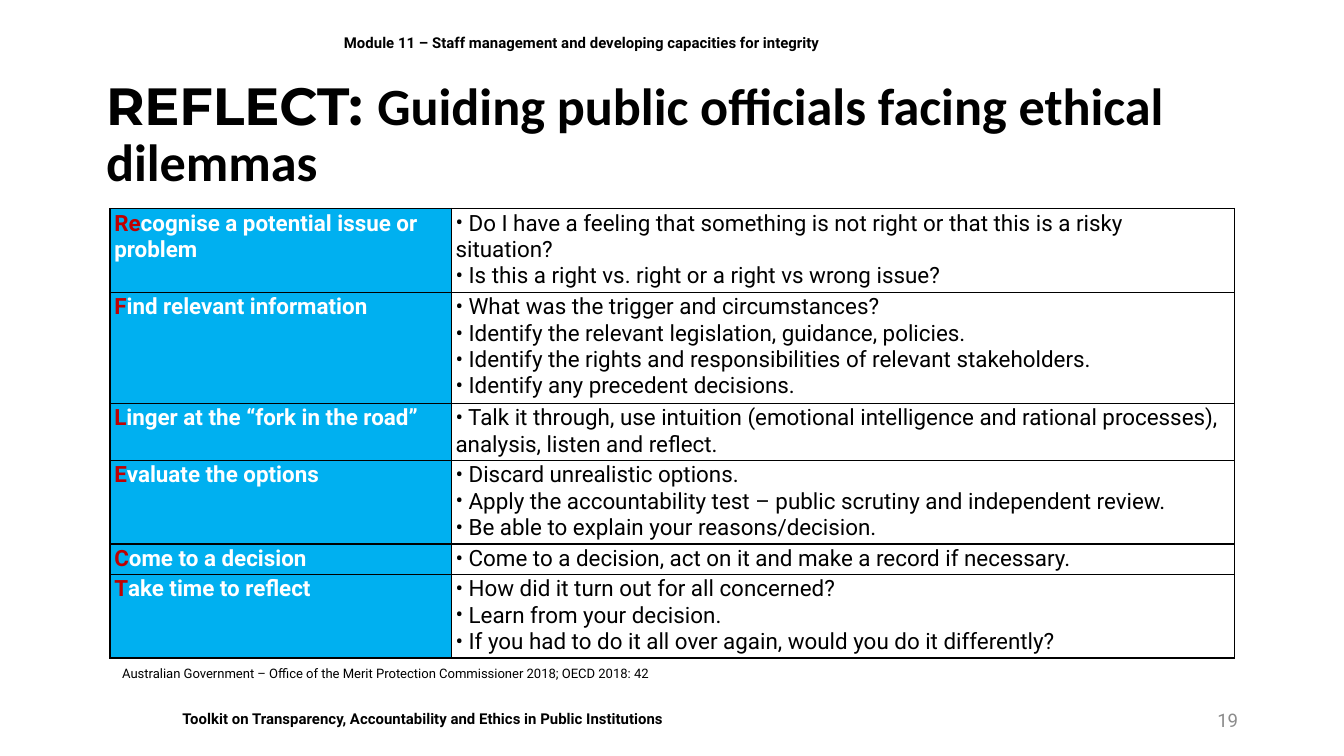
from lxml import etree
from pptx import Presentation
from pptx.dml.color import RGBColor
from pptx.enum.shapes import MSO_SHAPE
from pptx.enum.text import MSO_ANCHOR, MSO_AUTO_SIZE, PP_ALIGN
from pptx.oxml.ns import qn
from pptx.util import Cm, Pt

# Content
MODULE = "Module 11 – Staff management and developing capacities for integrity"
TITLE = ("REFLECT: ", "Guiding public officials facing ethical dilemmas")
SOURCE = "Australian Government – Office of the Merit Protection Commissioner 2018; OECD 2018: 42"
TOOLKIT = "Toolkit on Transparency, Accountability and Ethics in Public Institutions"
PAGE = "19"
# initial letters, rest of the step, lines the row takes, questions
STEPS = [
    ("Re", "cognise a potential issue or problem", 3, [
        "Do I have a feeling that something is not right or that this is a risky situation?",
        "Is this a right vs. right or a right vs wrong issue?"]),
    ("F", "ind relevant information", 4, [
        "What was the trigger and circumstances?",
        "Identify the relevant legislation, guidance, policies.",
        "Identify the rights and responsibilities of relevant stakeholders.",
        "Identify any precedent decisions."]),
    ("L", "inger at the “fork in the road”", 2, [
        "Talk it through, use intuition (emotional intelligence and rational processes), "
        "analysis, listen and reflect."]),
    ("E", "valuate the options", 3, [
        "Discard unrealistic options.",
        "Apply the accountability test – public scrutiny and independent review.",
        "Be able to explain your reasons/decision."]),
    ("C", "ome to a decision", 1, [
        "Come to a decision, act on it and make a record if necessary."]),
    ("T", "ake time to reflect", 3, [
        "How did it turn out for all concerned?",
        "Learn from your decision.",
        "If you had to do it all over again, would you do it differently?"]),
]

# Format
BLACK = RGBColor(0x00, 0x00, 0x00)
WHITE = RGBColor(0xFF, 0xFF, 0xFF)
GREY = RGBColor(0x8C, 0x8C, 0x8C)
RED = RGBColor(0xC0, 0x00, 0x00)
BLUE = RGBColor(0x00, 0xB0, 0xF0)
BODY = "Roboto"
BULLET_GAP = " "  # no-break space after each bullet
COLUMNS = (Cm(6.45), Cm(14.8))
LINE_HEIGHT, ROW_PADDING = 0.49, 0.07
RECTANGLE = MSO_SHAPE.RECTANGLE
MIDDLE, TOP = MSO_ANCHOR.MIDDLE, MSO_ANCHOR.TOP
LEFT, RIGHT = PP_ALIGN.LEFT, PP_ALIGN.RIGHT
NO_AUTOFIT = MSO_AUTO_SIZE.NONE


def add_text(paragraph, text, size=12, font=BODY, color=BLACK, bold=False, align=LEFT):
    paragraph.alignment = align
    run = paragraph.add_run()
    run.text = text
    run.font.size = Pt(size)
    run.font.name = font
    run.font.bold = bold
    run.font.color.rgb = color


def add_label(slide, box, text, anchor=TOP, **style):
    frame = slide.shapes.add_textbox(*map(Cm, box)).text_frame
    frame.word_wrap = True
    frame.vertical_anchor = anchor
    add_text(frame.paragraphs[0], text, **style)


def add_bullet(paragraph):
    properties = paragraph._p.get_or_add_pPr()
    properties.set("marL", "0")
    properties.set("indent", "0")
    etree.SubElement(properties, qn("a:buFont")).set("typeface", BODY)
    etree.SubElement(properties, qn("a:buChar")).set("char", "•")


def format_cell(cell, fill, margin_right=0.08):
    cell.margin_left, cell.margin_right = Cm(0.08), Cm(margin_right)
    cell.margin_top = cell.margin_bottom = Cm(0.03)
    cell.vertical_anchor = TOP
    properties = cell._tc.get_or_add_tcPr()
    for side in ("lnL", "lnR", "lnT", "lnB"):
        line = etree.SubElement(properties, qn(f"a:{side}"), w=str(Pt(1)))
        solid = etree.SubElement(line, qn("a:solidFill"))
        etree.SubElement(solid, qn("a:srgbClr"), val=str(BLACK))
    cell.fill.solid()
    cell.fill.fore_color.rgb = fill


def add_steps(slide):
    heights = [Cm(LINE_HEIGHT * lines + ROW_PADDING) for _, _, lines, _ in STEPS]
    table = slide.shapes.add_table(len(STEPS), len(COLUMNS), Cm(2.08), Cm(3.94),
                                   sum(COLUMNS), sum(heights)).table
    table.first_row = table.horz_banding = False
    for column, width in zip(table.columns, COLUMNS):
        column.width = width
    for row, height, (initial, rest, _, questions) in zip(table.rows, heights, STEPS):
        row.height = height
        step, guidance = row.cells
        format_cell(step, BLUE)
        format_cell(guidance, WHITE, margin_right=0.23)
        heading = step.text_frame.paragraphs[0]
        add_text(heading, initial, color=RED, bold=True)
        add_text(heading, rest, color=WHITE, bold=True)
        frame = guidance.text_frame
        for index, question in enumerate(questions):
            paragraph = frame.add_paragraph() if index else frame.paragraphs[0]
            add_bullet(paragraph)
            add_text(paragraph, BULLET_GAP + question)


def main():
    deck = Presentation()
    deck.slide_width, deck.slide_height = Cm(25.4), Cm(14.28)
    slide = deck.slides.add_slide(deck.slide_layouts[5])

    # Title
    title = slide.shapes.title
    title.left, title.top, title.width, title.height = map(Cm, (1.75, 1.63, 21.9, 1.9))
    title.text_frame.word_wrap = True
    title.text_frame.auto_size = NO_AUTOFIT
    title.text_frame.vertical_anchor = MIDDLE
    heading = title.text_frame.paragraphs[0]
    heading.line_spacing = 0.9
    for part, font in zip(TITLE, ("Montserrat", "Calibri")):
        add_text(heading, part, size=28, font=font, bold=True)

    # Footer band
    footer = slide.shapes.add_shape(RECTANGLE, Cm(3.2), Cm(13.28), Cm(18.2), Cm(0.6))
    footer.shadow.inherit = False
    footer.fill.solid()
    footer.fill.fore_color.rgb = WHITE
    footer.line.fill.background()
    footer.text_frame.word_wrap = True
    footer.text_frame.vertical_anchor = MIDDLE
    add_text(footer.text_frame.paragraphs[0], TOOLKIT, size=8, bold=True)

    # Header, page number, table and source
    add_label(slide, (6.25, 0.25, 17.4, 1.12), MODULE, anchor=MIDDLE, size=8, bold=True)
    add_label(slide, (17.93, 13.23, 5.72, 0.76), PAGE, anchor=MIDDLE, size=10,
              color=GREY, align=RIGHT)
    add_steps(slide)
    add_label(slide, (2.06, 12.45, 10.64, 0.56), SOURCE, size=7)

    deck.save("out.pptx")


if __name__ == "__main__":
    main()
